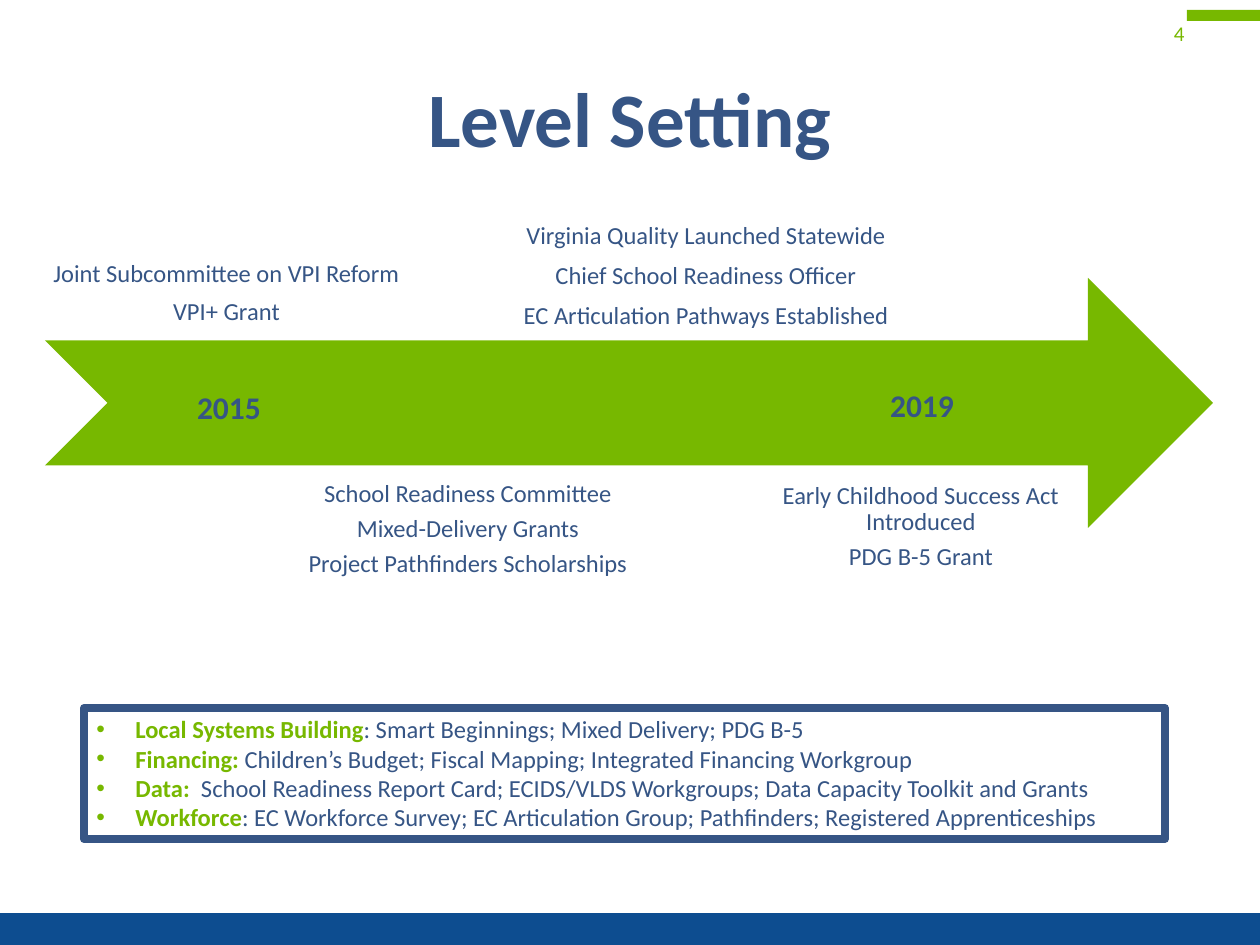
from lxml.etree import SubElement
from pptx import Presentation
from pptx.dml.color import RGBColor
from pptx.enum.shapes import MSO_SHAPE
from pptx.enum.text import MSO_ANCHOR, PP_ALIGN
from pptx.oxml.ns import qn
from pptx.util import Emu, Pt

NAVY = RGBColor(0x36, 0x55, 0x85)
GREEN = RGBColor(0x77, 0xB8, 0x00)
BLUE = RGBColor(0x0D, 0x4D, 0x90)

SIZE = (1260, 945)
PAD = 14
INDENT = 39

EVENTS = [
    ((37, 89, 379, 250), MSO_ANCHOR.BOTTOM, 1.0,
     ["Joint Subcommittee on VPI Reform", "VPI+ Grant"]),
    ((286, 467, 364, 250), MSO_ANCHOR.TOP, 0.9,
     ["School Readiness Committee", "Mixed-Delivery Grants",
      "Project Pathfinders Scholarships"]),
    ((764, 335, 314, 250), MSO_ANCHOR.BOTTOM, 0.9,
     ["Early Childhood Success Act Introduced", "PDG B-5 Grant"]),
]
LAUNCHES = ["Virginia Quality Launched Statewide",
            "Chief School Readiness Officer",
            "EC Articulation Pathways Established"]
YEARS = [("2015", (171, 382, 116, 50)), ("2019", (875, 380, 94, 50))]
THEMES = [
    ("Local Systems Building", ": Smart Beginnings; Mixed Delivery; PDG B-5"),
    ("Financing:", " Children’s Budget; Fiscal Mapping; Integrated Financing Workgroup"),
    ("Data: ", " School Readiness Report Card; ECIDS/VLDS Workgroups; "
               "Data Capacity Toolkit and Grants"),
    ("Workforce", ": EC Workforce Survey; EC Articulation Group; Pathfinders; "
                  "Registered Apprenticeships"),
]


def px(num):
    """Turn whole pixels into EMU."""
    return Emu(round(num * 914400 / 126))


def style(obj, vals):
    """Set each named value on an object."""
    for name, val in vals.items():
        setattr(obj, name, val)


def add_run(para, text, size, color=NAVY, bold=False):
    """Add one formatted run to a paragraph."""
    run = para.add_run()
    run.text = text
    style(run.font, {"name": "Calibri", "size": Pt(size), "bold": bold})
    run.font.color.rgb = color


def add_lines(frame, lines, form):
    """Write one paragraph per line, each a list of run arguments."""
    for num, runs in enumerate(lines):
        para = frame.add_paragraph() if num else frame.paragraphs[0]
        style(para, form)
        for run in runs:
            add_run(para, *run)


def add_text(slide, box, lines, form, frame=None):
    """Add a wrapped text box."""
    text = slide.shapes.add_textbox(*map(px, box)).text_frame
    style(text, {"word_wrap": True, **(frame or {})})
    add_lines(text, lines, form)


def add_block(slide, kind, box, fill=None):
    """Add a flat preset shape without an outline."""
    shape = slide.shapes.add_shape(kind, *map(px, box))
    shape.shadow.inherit = False
    if fill is None:
        shape.fill.background()
    else:
        shape.fill.solid()
        shape.fill.fore_color.rgb = fill
    shape.line.fill.background()
    return shape


def add_title(slide, text):
    """Place and format the title."""
    title = slide.shapes.title
    style(title, dict(zip(("left", "top", "width", "height"),
                          map(px, (63, 38, 1134, 158)))))
    title.text_frame.vertical_anchor = MSO_ANCHOR.MIDDLE
    add_lines(title.text_frame, [[(text, 44, NAVY, True)]],
              {"alignment": PP_ALIGN.CENTER})


def add_bullet(para):
    """Give a paragraph a hanging round bullet."""
    props = para._p.get_or_add_pPr()
    props.set("marL", str(px(INDENT)))
    props.set("indent", str(-px(INDENT)))
    SubElement(props, qn("a:buFont")).set("typeface", "Arial")
    SubElement(props, qn("a:buChar")).set("char", "•")


def add_themes(slide):
    """Add the framed list of themes."""
    shape = add_block(slide, MSO_SHAPE.RECTANGLE, (84, 708, 1081, 131))
    shape.line.color.rgb = NAVY
    shape.line.width = Pt(4.5)
    SubElement(shape.line._get_or_add_ln(), qn("a:round"))
    text = shape.text_frame
    style(text, {"word_wrap": True, "vertical_anchor": MSO_ANCHOR.TOP})
    lines = [[(head, 14, GREEN, True), (tail, 14)] for head, tail in THEMES]
    add_lines(text, lines, {"alignment": PP_ALIGN.LEFT})
    for para in text.paragraphs:
        add_bullet(para)


def add_events(slide):
    """Add the event notes around the arrow."""
    sides = ("left", "top", "right", "bottom")
    pads = {f"margin_{side}": px(PAD) for side in sides}
    for box, anchor, space, notes in EVENTS:
        add_text(slide, box, [[(note, 14)] for note in notes],
                 {"alignment": PP_ALIGN.CENTER, "line_spacing": space,
                  "space_after": Pt(4.9)},
                 {"vertical_anchor": anchor, **pads})
    add_text(slide, (508, 214, 396, 123), [[(note, 14)] for note in LAUNCHES],
             {"alignment": PP_ALIGN.CENTER, "space_after": Pt(5.9)})


def main():
    """Build and save the slide."""
    deck = Presentation()
    style(deck, dict(zip(("slide_width", "slide_height"), map(px, SIZE))))
    slide = deck.slides.add_slide(deck.slide_layouts[5])
    add_block(slide, MSO_SHAPE.RECTANGLE, (0, 913, 1260, 32), BLUE)
    add_block(slide, MSO_SHAPE.RECTANGLE, (1187, 10, 73, 11), GREEN)
    add_title(slide, "Level Setting")
    add_text(slide, (914, 8, 283, 50), [[("4", 12, GREEN)]],
             {"alignment": PP_ALIGN.RIGHT},
             {"vertical_anchor": MSO_ANCHOR.MIDDLE})
    add_block(slide, MSO_SHAPE.NOTCHED_RIGHT_ARROW, (45, 278, 1168, 250), GREEN)
    add_events(slide)
    for year, box in YEARS:
        add_text(slide, box, [[(year, 18, NAVY, True)]],
                 {"alignment": PP_ALIGN.CENTER})
    add_themes(slide)
    deck.save("out.pptx")


if __name__ == "__main__":
    main()
